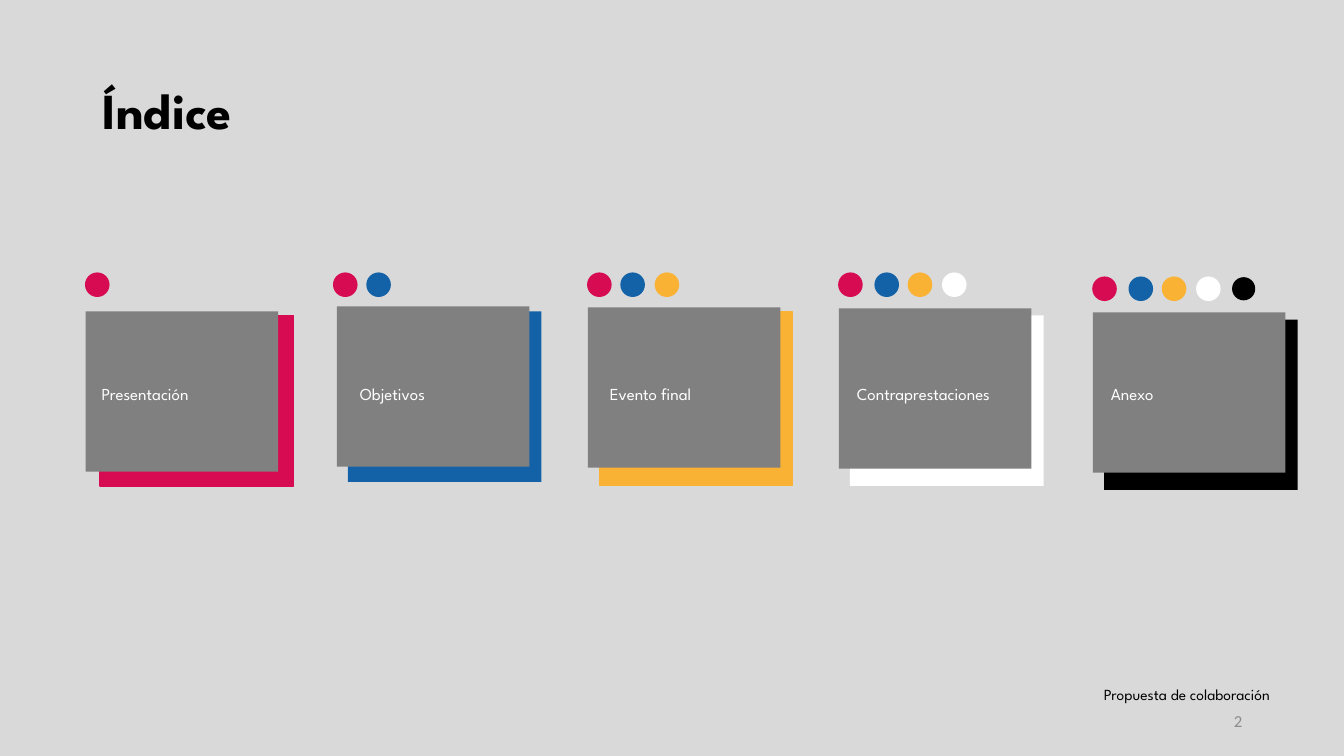
from dataclasses import dataclass

from pptx import Presentation
from pptx.dml.color import RGBColor
from pptx.enum import shapes, text
from pptx.util import Inches, Pt

BACKGROUND = RGBColor(0xD9, 0xD9, 0xD9)
GRAY = RGBColor(0x80, 0x80, 0x80)
NUMBER_GRAY = RGBColor(0x8C, 0x8C, 0x8C)
MAGENTA = RGBColor(0xD6, 0x0B, 0x52)
BLUE = RGBColor(0x13, 0x62, 0xA8)
YELLOW = RGBColor(0xF9, 0xB2, 0x33)
WHITE = RGBColor(0xFF, 0xFF, 0xFF)
BLACK = RGBColor(0x00, 0x00, 0x00)
COLORS = (MAGENTA, BLUE, YELLOW, WHITE, BLACK)

HEADING_FONT = "League Spartan"
CARD_SIZE = (1.91, 1.59)
DOT_SIZE = 0.23
LABEL_TOP = 3.76


@dataclass
class Section:
    """One section of the index, with its places in inches."""
    label: str
    label_left: float
    label_width: float
    card: tuple
    backing: tuple
    outlined: bool
    dots_top: float
    dots_left: tuple


SECTIONS = (
    Section("Presentación", 0.91, 1.63, (0.85, 3.09), (0.99, 3.13, 1.92, 1.69),
            True, 2.71, (0.85,)),
    Section("Objetivos", 3.47, 1.63, (3.34, 3.04), (3.45, 3.09, 1.92, 1.69),
            False, 2.71, (3.31, 3.64)),
    Section("Evento final", 5.95, 1.63, (5.83, 3.05), (5.95, 3.09, 1.91, 1.73),
            True, 2.71, (5.83, 6.16, 6.5)),
    Section("Contraprestaciones", 8.4, 1.82, (8.32, 3.06), (8.43, 3.13, 1.92, 1.69),
            False, 2.71, (8.32, 8.68, 9.01, 9.35)),
    Section("Anexo", 10.92, 1.91, (10.84, 3.1), (10.95, 3.17, 1.92, 1.69),
            False, 2.75, (10.84, 11.2, 11.53, 11.87, 12.22)),
)


def write_text(shape, content, *, size, color, font=HEADING_FONT, bold=False,
               align=text.PP_ALIGN.LEFT, anchor=text.MSO_ANCHOR.TOP, spacing=None):
    """Fill a shape with one formatted paragraph."""
    frame = shape.text_frame
    frame.word_wrap = True
    frame.vertical_anchor = anchor
    paragraph = frame.paragraphs[0]
    paragraph.alignment = align
    paragraph.line_spacing = spacing
    run = paragraph.add_run()
    run.text = content
    run.font.name = font
    run.font.size = Pt(size)
    run.font.bold = bold
    run.font.color.rgb = color


def add_text(slide, box, content, **style):
    """Add a text box at the given left, top, width and height."""
    write_text(slide.shapes.add_textbox(*map(Inches, box)), content, **style)


def add_figure(slide, kind, box, color, outlined=False):
    """Add a flat shape, optionally outlined in its own colour."""
    shape = slide.shapes.add_shape(kind, *map(Inches, box))
    shape.shadow.inherit = False
    shape.fill.solid()
    shape.fill.fore_color.rgb = color
    if outlined:
        shape.line.color.rgb = color
        shape.line.width = Pt(1)
    else:
        shape.line.fill.background()


def add_title(slide, content):
    """Place and format the title placeholder."""
    title = slide.shapes.title
    title.left, title.top, title.width, title.height = map(Inches, (0.92, 0.4, 11.5, 1.45))
    write_text(title, content, size=36, color=BLACK, bold=True,
               anchor=text.MSO_ANCHOR.MIDDLE, spacing=0.9)


def add_section(slide, section, color):
    """Add a card with its coloured backing, dots and label."""
    rectangle = shapes.MSO_SHAPE.RECTANGLE
    add_figure(slide, rectangle, section.backing, color, section.outlined)
    add_figure(slide, rectangle, section.card + CARD_SIZE, GRAY)
    for left, dot_color in zip(section.dots_left, COLORS):
        add_figure(slide, shapes.MSO_SHAPE.OVAL,
                   (left, section.dots_top, DOT_SIZE, DOT_SIZE),
                   dot_color, outlined=dot_color != BLACK)
    add_text(slide, (section.label_left, LABEL_TOP, section.label_width, 0.3),
             section.label, size=12, color=WHITE)


def main():
    """Build and save the index slide."""
    presentation = Presentation()
    presentation.slide_width = Inches(13.33)
    presentation.slide_height = Inches(7.5)
    slide = presentation.slides.add_slide(presentation.slide_layouts[5])
    slide.background.fill.solid()
    slide.background.fill.fore_color.rgb = BACKGROUND

    add_title(slide, "Índice")
    for section, color in zip(SECTIONS, COLORS):
        add_section(slide, section, color)
    add_text(slide, (10.85, 6.75, 2.27, 0.29), "Propuesta de colaboración",
             size=11, color=BLACK)
    add_text(slide, (9.42, 6.95, 3, 0.4), "2", size=12, color=NUMBER_GRAY,
             font="Calibri", align=text.PP_ALIGN.RIGHT, anchor=text.MSO_ANCHOR.MIDDLE)
    presentation.save("out.pptx")


if __name__ == "__main__":
    main()
